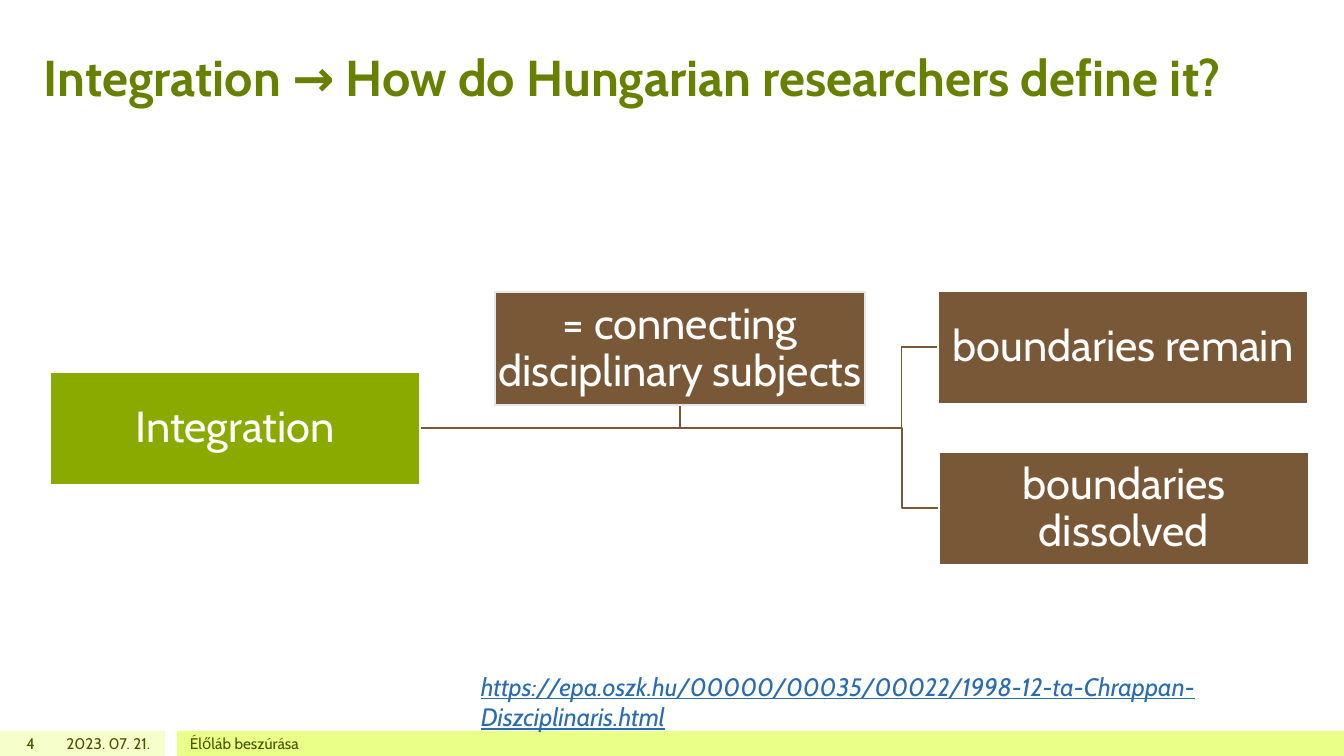
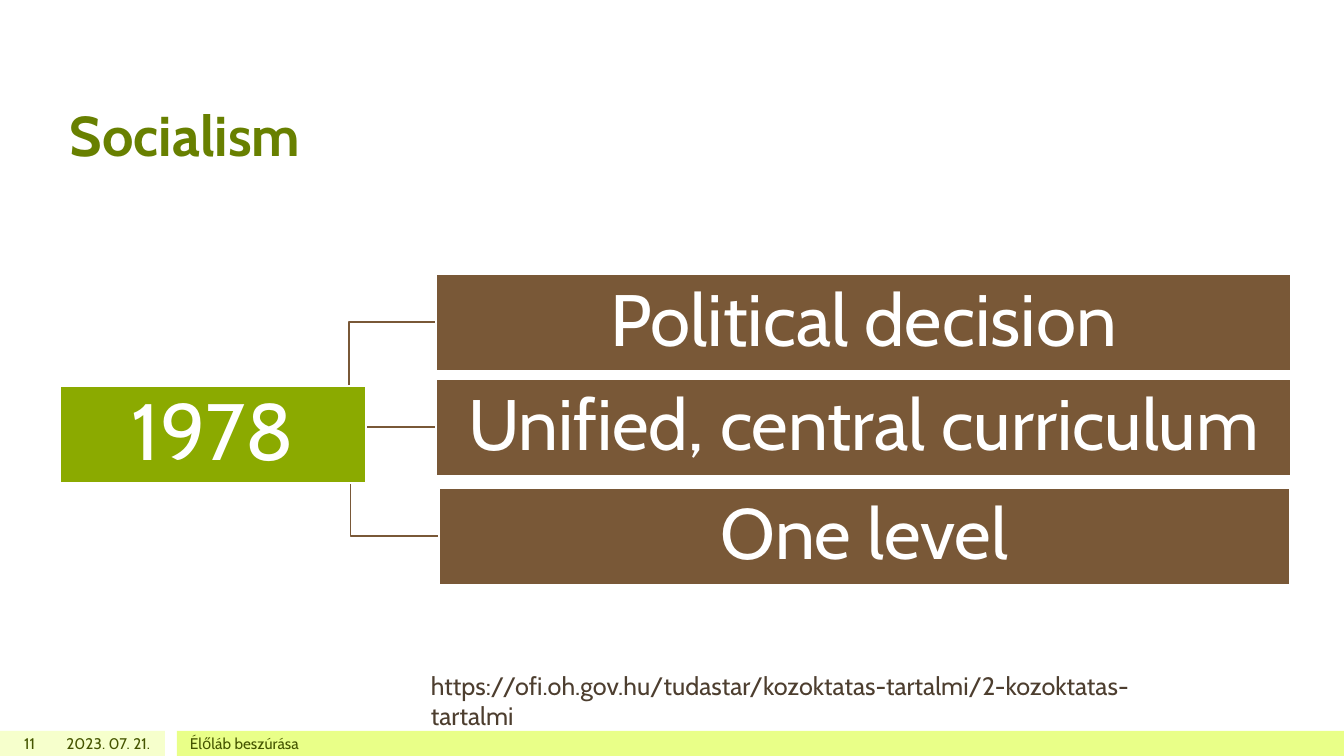
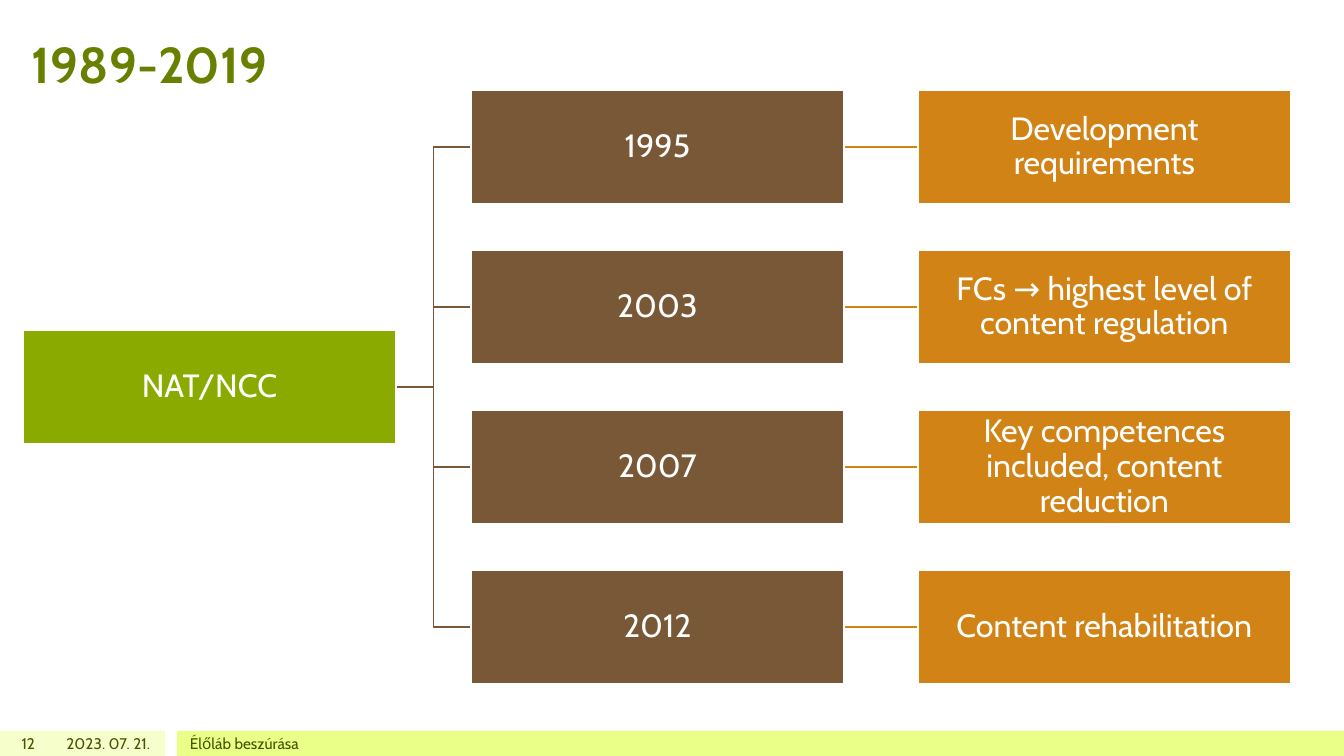
from pptx import Presentation
from pptx.dml.color import RGBColor
from pptx.enum.shapes import MSO_CONNECTOR, MSO_SHAPE
from pptx.enum.text import MSO_ANCHOR, PP_ALIGN
from pptx.oxml.ns import qn
from pptx.util import Emu, Pt
from lxml import etree

RECTANGLE = MSO_SHAPE.RECTANGLE
STRAIGHT, ELBOW = MSO_CONNECTOR.STRAIGHT, MSO_CONNECTOR.ELBOW
TOP, MIDDLE, BOTTOM = MSO_ANCHOR.TOP, MSO_ANCHOR.MIDDLE, MSO_ANCHOR.BOTTOM
LEFT, CENTER, RIGHT = PP_ALIGN.LEFT, PP_ALIGN.CENTER, PP_ALIGN.RIGHT

# Shared style
WIDTH, HEIGHT = 1344, 756
FONT = "Cabin"
WHITE, GREEN, BROWN, ORANGE = "FFFFFF", "8BAA00", "795837", "D18316"
TITLE_COLOR, FOOTER_COLOR = "688000", "455500"
LINK_COLOR, TEXT_COLOR = "2A6CB2", "4D3E2F"
PALE_BAND, BRIGHT_BAND, GREY_EDGE = "F6FFCC", "E9FF88", "E7E7E7"
FOOTER_TOP, FOOTER_HEIGHT = 731, 25
FOOTER_DATE, FOOTER_TEXT = "2023. 07. 21.", "Élőláb beszúrása"

# Content: titles and sources
INTEGRATION = {
    "page": "4",
    "title": ("Integration → How do Hungarian researchers define it?", (34, 31, 1264, 81), 36),
    "source": ("https://epa.oszk.hu/00000/00035/00022/1998-12-ta-Chrappan-Diszciplinaris.html",
               (471, 666, 851, 40), {"color": LINK_COLOR, "italic": True, "underline": True}),
}
SOCIALISM = {
    "page": "11",
    "title": ("Socialism", (60, 42, 1033, 131), 40),
    "source": ("https://ofi.oh.gov.hu/tudastar/kozoktatas-tartalmi/2-kozoktatas-tartalmi",
               (421, 665, 783, 40), {"color": TEXT_COLOR}),
}
CURRICULUM = {"page": "12", "title": ("1989-2019", (22, 43, 1033, 56), 36)}

# Content: diagrams
BOUNDARIES = [("boundaries remain", (938, 291)), ("boundaries dissolved", (939, 452))]
DECISIONS = [
    ("Political decision", (436, 274, 855, 97), 52),
    ("Unified, central curriculum", (436, 379, 855, 97), 51),
    ("One level", (439, 488, 851, 97), 51),
]
VERSIONS = [
    ("1995", "Development requirements"),
    ("2003", "FCs → highest level of content regulation"),
    ("2007", "Key competences included, content reduction"),
    ("2012", "Content rehabilitation"),
]


def px(value):
    return Emu(round(value * 914400 / 100.8))


def rgb(color):
    return RGBColor.from_string(color)


def write(shape, text, size=18, color=WHITE, align=LEFT, anchor=TOP,
          bold=False, italic=False, underline=False, margin=None, spacing=None):
    frame = shape.text_frame
    frame.word_wrap = True
    frame.vertical_anchor = anchor
    if margin is not None:
        frame.margin_left = frame.margin_right = px(margin)
        frame.margin_top = frame.margin_bottom = px(margin)
    paragraph = frame.paragraphs[0]
    paragraph.alignment = align
    if spacing:
        paragraph.line_spacing = spacing
    run = paragraph.add_run()
    run.text = text
    font = run.font
    font.name, font.size, font.color.rgb = FONT, Pt(size), rgb(color)
    font.bold, font.italic, font.underline = bold, italic, underline


def add_text(slide, text, place, **style):
    write(slide.shapes.add_textbox(*map(px, place)), text, **style)


def add_rectangle(slide, place, fill, edge=None):
    shape = slide.shapes.add_shape(RECTANGLE, *map(px, place))
    shape.shadow.inherit = False
    shape.fill.solid()
    shape.fill.fore_color.rgb = rgb(fill)
    if edge:
        shape.line.color.rgb = rgb(edge)
        shape.line.width = Pt(1)
    else:
        shape.line.fill.background()
    return shape


def add_box(slide, text, place, fill, size, edge=WHITE, margin=2):
    write(add_rectangle(slide, place, fill, edge), text, size=size, align=CENTER,
          anchor=MIDDLE, margin=margin, spacing=0.9)


def add_link(slide, start, end, kind=ELBOW, color=BROWN):
    connector = slide.shapes.add_connector(kind, *map(px, start + end))
    connector.line.color.rgb = rgb(color)
    connector.line.width = Pt(1)
    etree.SubElement(connector._element.spPr, qn("a:effectLst"))


def add_page(presentation, content):
    slide = presentation.slides.add_slide(presentation.slide_layouts[6])
    # Footer bands and texts
    for left, width, fill in [(0, 165, PALE_BAND), (177, WIDTH - 177, BRIGHT_BAND)]:
        add_rectangle(slide, (left, FOOTER_TOP, width, FOOTER_HEIGHT), fill)
    for text, left, width, align in [(content["page"], 0, 45, RIGHT),
                                     (FOOTER_DATE, 50, 110, RIGHT),
                                     (FOOTER_TEXT, 180, 1008, LEFT)]:
        add_text(slide, text, (left, FOOTER_TOP, width, FOOTER_HEIGHT), size=11,
                 color=FOOTER_COLOR, align=align, anchor=MIDDLE)
    # Title and source
    title, place, size = content["title"]
    add_text(slide, title, place, size=size, color=TITLE_COLOR, bold=True, anchor=BOTTOM)
    if "source" in content:
        source, place, style = content["source"]
        add_text(slide, source, place, **style)
    return slide


def build_integration(presentation):
    slide = add_page(presentation, INTEGRATION)
    box_size = (370, 113)
    axis, trunk_end, middle = 428, 865, 680
    add_link(slide, (421, axis), (trunk_end, axis), STRAIGHT)
    add_link(slide, (middle, axis), (middle, 405), STRAIGHT)
    for text, (left, top) in BOUNDARIES:
        add_link(slide, (trunk_end, axis), (left, top + box_size[1] // 2))
        add_box(slide, text, (left, top) + box_size, BROWN, 31)
    add_box(slide, "Integration", (50, 372) + box_size, GREEN, 31)
    add_box(slide, "= connecting disciplinary subjects", (495, 292) + box_size,
            BROWN, 31, edge=GREY_EDGE)


def build_socialism(presentation):
    slide = add_page(presentation, SOCIALISM)
    for text, place, size in DECISIONS:
        left, top, _, height = place
        add_link(slide, (262, 434), (left, top + height // 2))
        add_box(slide, text, place, BROWN, size, margin=4)
    add_box(slide, "1978", (60, 386, 306, 97), GREEN, 57, margin=4)


def build_curriculum(presentation):
    slide = add_page(presentation, CURRICULUM)
    width, height, row_step = 373, 114, 160
    root_left, year_left, change_left = 23, 471, 918
    first_top = 90
    root_top = first_top + row_step * (len(VERSIONS) - 1) // 2
    root_end = (root_left + width, root_top + height // 2)
    for row, (year, change) in enumerate(VERSIONS):
        top = first_top + row * row_step
        center = top + height // 2
        add_link(slide, root_end, (year_left, center))
        add_link(slide, (year_left + width, center), (change_left, center), STRAIGHT, ORANGE)
        add_box(slide, year, (year_left, top, width, height), BROWN, 23)
        add_box(slide, change, (change_left, top, width, height), ORANGE, 23)
    add_box(slide, "NAT/NCC", (root_left, root_top, width, height), GREEN, 23)


def main():
    presentation = Presentation()
    presentation.slide_width, presentation.slide_height = px(WIDTH), px(HEIGHT)
    build_integration(presentation)
    build_socialism(presentation)
    build_curriculum(presentation)
    presentation.save("out.pptx")


if __name__ == "__main__":
    main()
